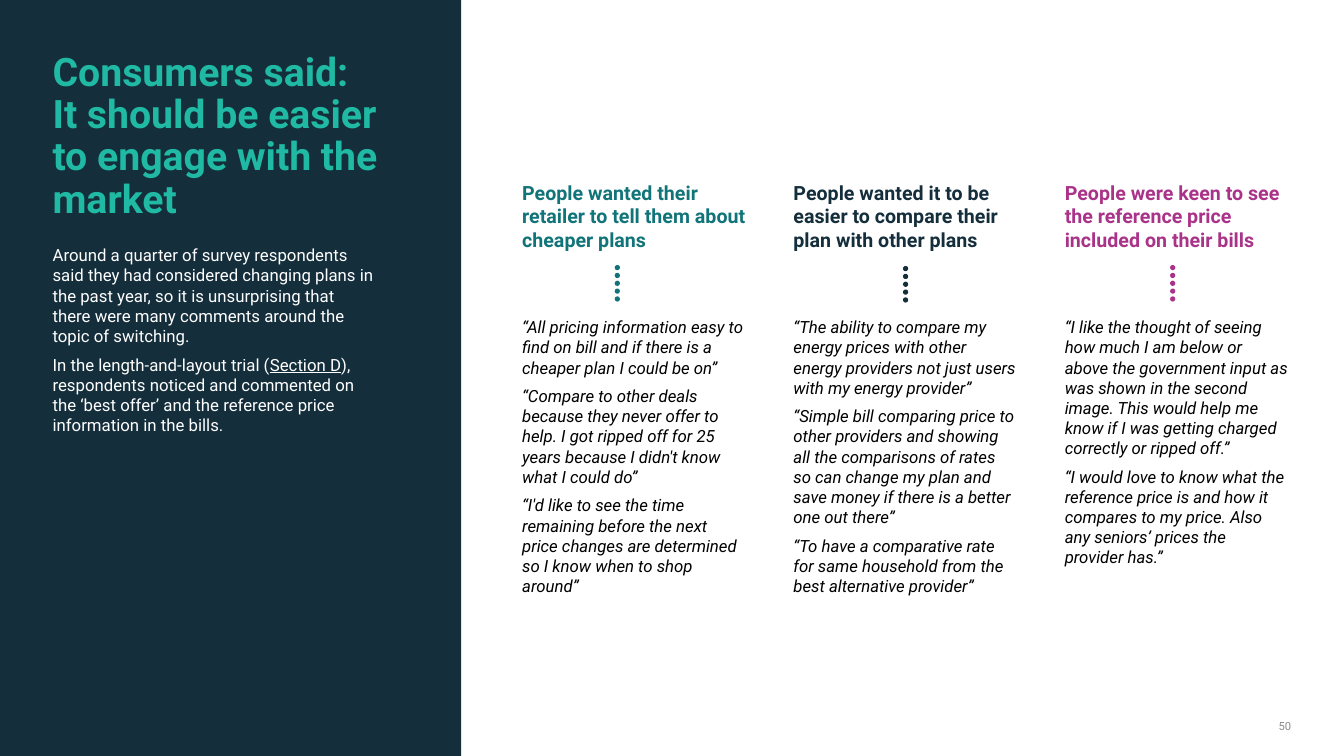
"""Build the slide on consumers wanting easier engagement with the market."""
import pptx
import pptx.dml.color
import pptx.enum.shapes
import pptx.enum.text
import pptx.util

Pt = pptx.util.Pt
OVAL = pptx.enum.shapes.MSO_SHAPE.OVAL
RECTANGLE = pptx.enum.shapes.MSO_SHAPE.RECTANGLE
ALIGN = pptx.enum.text.PP_ALIGN
ANCHOR = pptx.enum.text.MSO_ANCHOR

THEME = {
    "font": "Roboto",
    "navy": "142E3B", "green": "20B9A3", "teal": "117479", "purple": "AA338A",
    "white": "FFFFFF", "black": "000000", "grey": "8C8C8C",
    "title": 28, "heading": 14, "body": 12, "number": 8,
}


def fill_frame(shape, box, paragraphs, anchor=ANCHOR.TOP):
    """Place a text shape and write (text, size, colour, bold, italic, space after) rows."""
    shape.left, shape.top, shape.width, shape.height = map(Pt, box)
    frame = shape.text_frame
    frame.word_wrap = True
    frame.auto_size = pptx.enum.text.MSO_AUTO_SIZE.NONE
    frame.vertical_anchor = anchor
    frame.margin_left = frame.margin_right = frame.margin_top = frame.margin_bottom = 0
    for index, (text, size, color, bold, italic, after) in enumerate(paragraphs):
        paragraph = frame.add_paragraph() if index else frame.paragraphs[0]
        paragraph.text = text
        paragraph.alignment = ALIGN.LEFT
        paragraph.space_before = Pt(0)
        paragraph.space_after = Pt(after)
        font = paragraph.font
        font.name, font.size, font.bold, font.italic = THEME["font"], Pt(THEME[size]), bold, italic
        font.color.rgb = pptx.dml.color.RGBColor.from_string(THEME[color])
    return frame


def add_solid(shapes, kind, box, color):
    """Add a filled shape with no line or shadow."""
    shape = shapes.add_shape(kind, *map(Pt, box))
    shape.shadow.inherit = False
    shape.fill.solid()
    shape.fill.fore_color.rgb = pptx.dml.color.RGBColor.from_string(THEME[color])
    shape.line.fill.background()
    return shape


presentation = pptx.Presentation()
presentation.slide_width, presentation.slide_height = Pt(960), Pt(540)
slide = presentation.slides.add_slide(presentation.slide_layouts[5])
shapes = slide.shapes

panel = add_solid(shapes, RECTANGLE, (0, 0, 329.5, 540), "navy")
title = shapes.title
panel.element.addnext(title.element)
title_frame = fill_frame(title, (37.6, 37.4, 256.3, 122), [
    ("Consumers said:\vIt should be easier to engage with the market",
     "title", "green", True, False, 0)])
title_frame.paragraphs[0].line_spacing = 0.9

introduction = fill_frame(shapes.add_textbox(0, 0, 0, 0), (37.6, 175, 230, 351), [
    ("Around a quarter of survey respondents said they had considered changing plans in the "
     "past year, so it is unsurprising that there were many comments around the topic of "
     "switching.", "body", "white", False, False, 6),
    ("In the length-and-layout trial (", "body", "white", False, False, 6)])
trial = introduction.paragraphs[1]
section = trial.add_run()
section.text = "Section D"
section.font.underline = True
trial.add_run().text = ("), respondents noticed and commented on the ‘best offer’ and the "
                        "reference price information in the bills.")

columns = [
    ("teal", 439.1, 189.3, "People wanted their retailer to tell them about cheaper plans", [
        "“All pricing information easy to find on bill and if there is a cheaper plan I could "
        "be on”",
        "“Compare to other deals because they never offer to help. I got ripped off for 25 "
        "years because I didn't know what I could do”",
        "“I'd like to see the time remaining before the next price changes are determined so I "
        "know when to shop around”"]),
    ("navy", 645, 190, "People wanted it to be easier to compare their plan with other plans", [
        "“The ability to compare my energy prices with other energy providers not just users "
        "with my energy provider”",
        "“Simple bill comparing price to other providers and showing all the comparisons of "
        "rates so can change my plan and save money if there is a better one out there”",
        "“To have a comparative rate for same household from the best alternative provider”"]),
    ("purple", 835.8, 189.3, "People were keen to see the reference price included on their bills", [
        "“I like the thought of seeing how much I am below or above the government input as was "
        "shown in the second image. This would help me know if I was getting charged correctly "
        "or ripped off.”",
        "“I would love to know what the reference price is and how it compares to my price. "
        "Also any seniors’ prices the provider has.”"]),
]
for index, (color, dot_left, dot_top, heading, quotes) in enumerate(columns):
    rows = [(heading, "heading", color, True, False, 47)]
    rows += [(quote, "body", "black", False, True, 6) for quote in quotes]
    fill_frame(shapes.add_textbox(0, 0, 0, 0), (373 + index * 193.8, 129, 160, 340), rows)
    dots = shapes.add_group_shape()
    for step in range(5):
        add_solid(dots.shapes, OVAL, (dot_left, dot_top + step * 5.6, 3.7, 3.7), color)

number = fill_frame(shapes.add_textbox(0, 0, 0, 0), (890, 514, 32.3, 9.4),
                    [("50", "number", "grey", False, False, 0)], ANCHOR.BOTTOM)
number.paragraphs[0].alignment = ALIGN.RIGHT

presentation.save("out.pptx")
